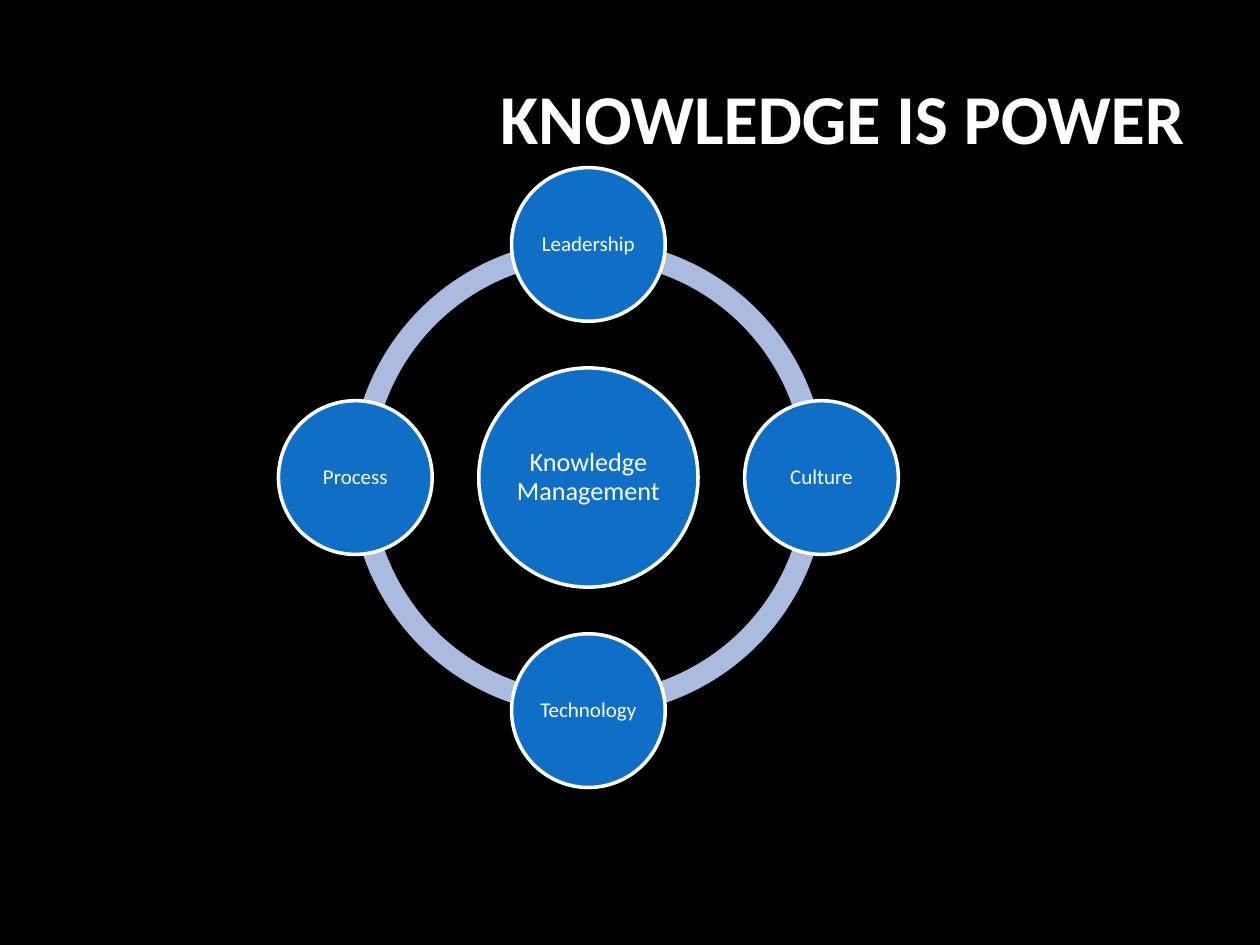
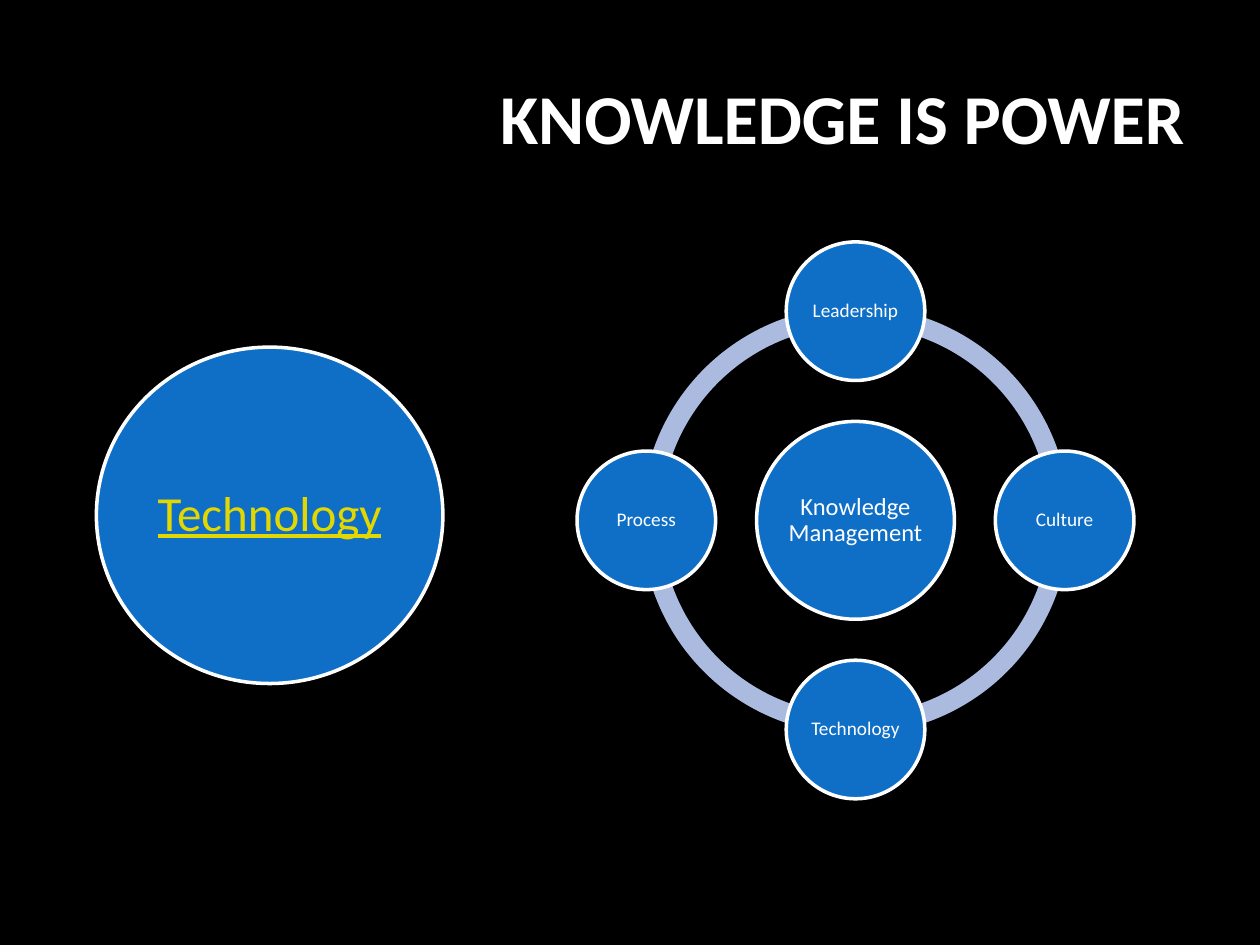
from dataclasses import dataclass
from math import cos, pi, sin

from pptx import Presentation
from pptx.dml.color import RGBColor
from pptx.enum.shapes import MSO_SHAPE as Preset
from pptx.enum.text import MSO_ANCHOR as Anchor, PP_ALIGN as Align
from pptx.slide import Slide
from pptx.util import Inches, Pt

COLORS = {
    "background": "000000",
    "text": "FFFFFF",
    "outline": "FFFFFF",
    "disc": "0F6FC6",
    "ring": "ABBBDF",
    "link": "E2D700",
}
FONT = "Calibri"
TITLE = "KNOWLEDGE IS POWER"
HUB = "Knowledge Management"
PILLARS = ("Leadership", "Culture", "Technology", "Process")
QUARTER_TURN = 54
FULL_TURN = 4 * QUARTER_TURN
RING_THICKNESS = 0.046


@dataclass(frozen=True)
class Disc:
    text: str
    center_x: float
    center_y: float
    width: float
    height: float
    font_size: int
    color: str = "text"
    underline: bool = False


@dataclass(frozen=True)
class Cycle:
    center_x: float
    center_y: float
    ring_size: float
    orbit: float
    hub_size: float
    hub_font: int
    pillar_size: float
    pillar_font: int


CYCLE_LARGE = Cycle(4.67, 3.79, 3.78, 1.85, 1.74, 15, 1.22, 12)
CYCLE_SMALL = Cycle(6.79, 4.13, 3.4, 1.66, 1.57, 14, 1.1, 11)
TECHNOLOGY_FOCUS = Disc("Technology", 2.14, 4.09, 2.75, 2.67, 28, "link", True)


def rgb(name: str) -> RGBColor:
    return RGBColor.from_string(COLORS[name])


def add_centered(page: Slide, preset: Preset, center_x: float, center_y: float,
                 width: float, height: float, fill: str):
    shape = page.shapes.add_shape(
        preset, Inches(center_x - width / 2), Inches(center_y - height / 2),
        Inches(width), Inches(height))
    shape.shadow.inherit = False
    shape.fill.solid()
    shape.fill.fore_color.rgb = rgb(fill)
    return shape


def draw_disc(page: Slide, disc: Disc) -> None:
    shape = add_centered(page, Preset.OVAL, disc.center_x, disc.center_y,
                         disc.width, disc.height, "disc")
    shape.line.color.rgb = rgb("outline")
    shape.line.width = Pt(2)
    frame = shape.text_frame
    frame.word_wrap = True
    frame.vertical_anchor = Anchor.MIDDLE
    frame.margin_left = frame.margin_right = Inches(0.02)
    frame.margin_top = frame.margin_bottom = Inches(0.02)
    para = frame.paragraphs[0]
    para.text = disc.text
    para.alignment = Align.CENTER
    para.line_spacing = 0.9
    para.font.name = FONT
    para.font.size = Pt(disc.font_size)
    para.font.color.rgb = rgb(disc.color)
    if disc.underline:
        para.font.underline = True


def draw_cycle(page: Slide, cycle: Cycle) -> None:
    for quarter in range(len(PILLARS)):
        arc = add_centered(page, Preset.BLOCK_ARC, cycle.center_x, cycle.center_y,
                           cycle.ring_size, cycle.ring_size, "ring")
        arc.line.fill.background()
        arc.adjustments[0] = quarter * QUARTER_TURN
        arc.adjustments[1] = (quarter + 1) * QUARTER_TURN % FULL_TURN
        arc.adjustments[2] = RING_THICKNESS
    draw_disc(page, Disc(HUB, cycle.center_x, cycle.center_y,
                         cycle.hub_size, cycle.hub_size, cycle.hub_font))
    for index, pillar in enumerate(PILLARS):
        angle = index * 2 * pi / len(PILLARS)
        draw_disc(page, Disc(
            pillar,
            cycle.center_x + cycle.orbit * sin(angle),
            cycle.center_y - cycle.orbit * cos(angle),
            cycle.pillar_size, cycle.pillar_size, cycle.pillar_font))


def add_page(deck: Presentation) -> Slide:
    page = deck.slides.add_slide(deck.slide_layouts.get_by_name("Title Only"))
    title = page.shapes.title
    title.left, title.top = Inches(2.58), Inches(0.3)
    title.width, title.height = Inches(6.92), Inches(1.25)
    title.text_frame.vertical_anchor = Anchor.MIDDLE
    para = title.text_frame.paragraphs[0]
    para.text = TITLE
    para.alignment = Align.RIGHT
    para.font.name = FONT
    para.font.size = Pt(40)
    para.font.bold = True
    para.font.color.rgb = rgb("text")
    return page


def main() -> None:
    deck = Presentation()
    deck.slide_width, deck.slide_height = Inches(10), Inches(7.5)
    background = deck.slide_master.background.fill
    background.solid()
    background.fore_color.rgb = rgb("background")

    overview = add_page(deck)
    draw_cycle(overview, CYCLE_LARGE)

    technology = add_page(deck)
    draw_cycle(technology, CYCLE_SMALL)
    draw_disc(technology, TECHNOLOGY_FOCUS)

    deck.save("out.pptx")


if __name__ == "__main__":
    main()
